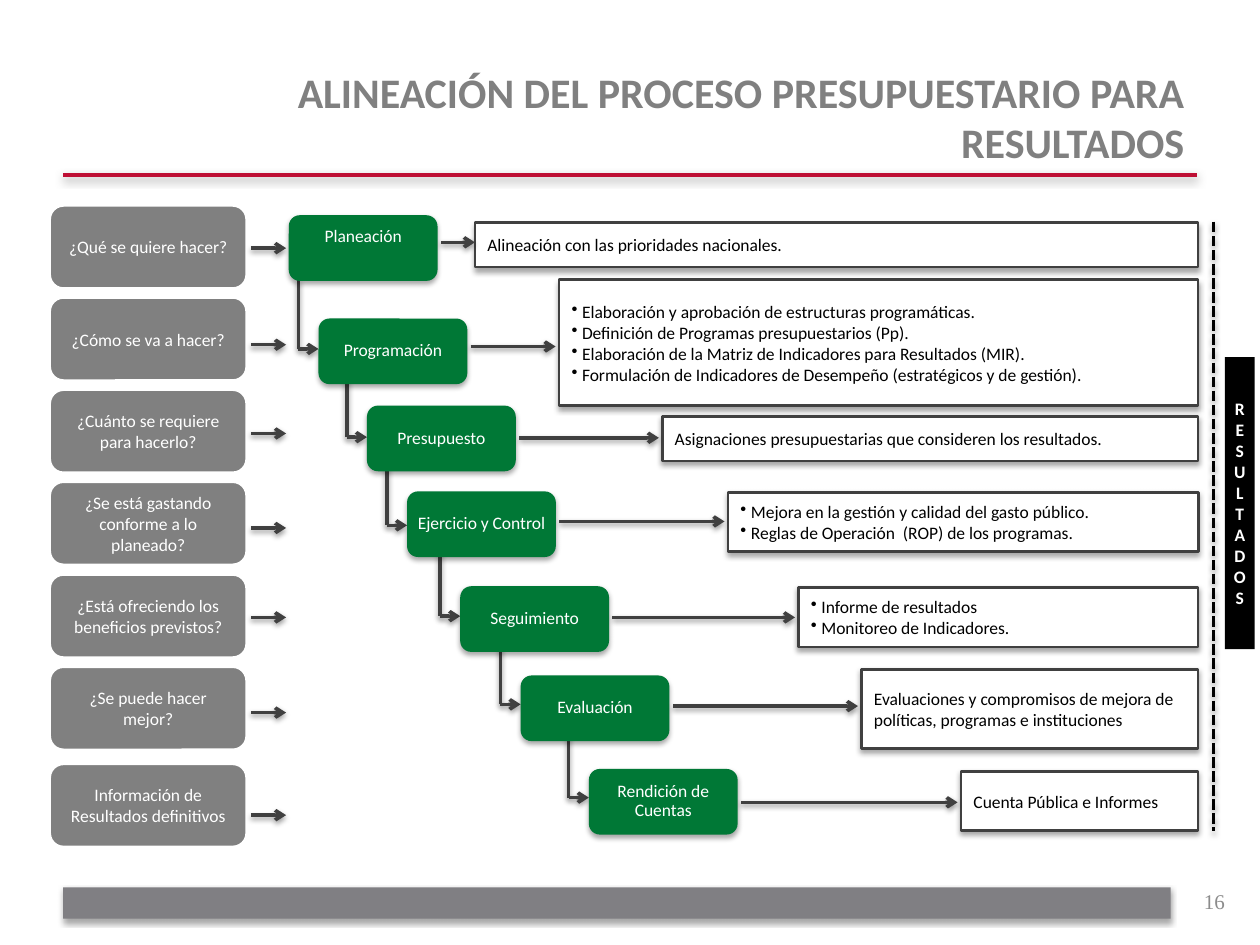
import pptx
import pptx.util
import pptx.dml.color
import pptx.enum.dml
import pptx.enum.shapes
import pptx.enum.text
import pptx.oxml
import pptx.oxml.ns
import lxml.etree

Pt = pptx.util.Pt
SHAPE = pptx.enum.shapes.MSO_SHAPE
ALIGN = pptx.enum.text.PP_ALIGN
ANCHOR = pptx.enum.text.MSO_ANCHOR

THEME = {
    "font": "Calibri", "number_font": "Times New Roman",
    "title_size": 24, "body_size": 10, "number_size": 12,
    "gray": "808080", "green": "007836", "red": "BE0F34", "bar": "807F83",
    "line": "404040", "number": "8C8C8C", "white": "FFFFFF", "black": "000000",
}

TITLE = "ALINEACIÓN DEL PROCESO PRESUPUESTARIO PARA RESULTADOS"
PAGE = "16"
RESULT = "RESULTADOS"

# question, top, arrow y
QUESTIONS = [
    ("¿Qué se quiere hacer?", 117.4, 141.8),
    ("¿Cómo se va a hacer?", 170, 197),
    ("¿Cuánto se requiere para hacerlo?", 222.7, 247.7),
    ("¿Se está gastando conforme a lo planeado?", 275.3, 301.7),
    ("¿Está ofreciendo los beneficios previstos?", 328.3, 352.8),
    ("¿Se puede hacer mejor?", 381, 407.2),
    ("Información de Resultados definitivos", 436.5, 465.8),
]

# stage, left, top, arrow y, top of the elbow that leads in
STAGES = [
    ("Planeación", 165, 123, 138.5, None),
    ("Programación", 182, 182, 198, 159.8),
    ("Presupuesto", 209.7, 231.8, 250.2, 210.2),
    ("Ejercicio y Control", 232.6, 280.8, 298, 260.6),
    ("Seguimiento", 263, 335, 352.8, 312.5),
    ("Evaluación", 297.5, 386, 403.5, 362.9),
    ("Rendición de Cuentas", 336.5, 439.4, 458.5, 416.2),
]

# detail lines, left, top, height
DETAILS = [
    (["Alineación con las prioridades nacionales."], 271.4, 127.3, 25.4),
    (["Elaboración y aprobación de estructuras programáticas.",
      "Definición de Programas presupuestarios (Pp).",
      "Elaboración de la Matriz de Indicadores para Resultados (MIR).",
      "Formulación de Indicadores de Desempeño (estratégicos y de gestión)."],
     319.5, 159.8, 72),
    (["Asignaciones presupuestarias que consideren los resultados."], 378.5, 238, 25.4),
    (["Mejora en la gestión y calidad del gasto público.",
      "Reglas de Operación  (ROP) de los programas."], 416, 281.3, 34),
    (["Informe de resultados", "Monitoreo de Indicadores."], 456.3, 335.7, 34),
    (["Evaluaciones y compromisos de mejora de políticas, programas e instituciones"],
     492.3, 382.6, 45.2),
    (["Cuenta Pública e Informes"], 549.2, 440.8, 34),
]

QUESTION_LEFT, QUESTION_W, QUESTION_H = 28.4, 112.6, 47.5
QUESTION_ARROW = (143.3, 163.5)
STAGE_W, STAGE_H = 85, 37.5
DETAIL_RIGHT = 684.7
ELBOW_W, ELBOW_H = 11.5, 39.6
GAP = 2


def rgb(name):
    return pptx.dml.color.RGBColor.from_string(THEME[name])


def write(shape, lines, color="black", size="body_size", font="font", bold=False,
          align=ALIGN.LEFT, anchor=ANCHOR.MIDDLE, insets=(7.2, 3.6),
          spacing=None, bullets=False):
    tf = shape.text_frame
    tf.word_wrap = True
    tf.vertical_anchor = anchor
    tf.margin_left = tf.margin_right = Pt(insets[0])
    tf.margin_top = tf.margin_bottom = Pt(insets[1])
    for i, line in enumerate(lines):
        p = tf.paragraphs[0] if i == 0 else tf.add_paragraph()
        p.alignment = align
        if spacing:
            p.line_spacing = spacing
        if bullets:
            pPr = p._p.get_or_add_pPr()
            pPr.set("marL", str(Pt(6)))
            pPr.set("indent", str(-Pt(6)))
            pptx.oxml.ns.qn("a:buChar")
            lxml.etree.SubElement(pPr, pptx.oxml.ns.qn("a:buChar"), char="•")
        r = p.add_run()
        r.text = line
        r.font.name = THEME[font]
        r.font.size = Pt(THEME[size])
        r.font.bold = bold
        r.font.color.rgb = rgb(color)


def add_shadow(effects, blur=3.1, dist=1.8, alpha=35):
    effects.append(pptx.oxml.parse_xml(
        f'<a:outerShdw {pptx.oxml.ns.nsdecls("a")} blurRad="{Pt(blur)}" dist="{Pt(dist)}" '
        f'dir="5400000" rotWithShape="0"><a:srgbClr val="000000">'
        f'<a:alpha val="{alpha * 1000}"/></a:srgbClr></a:outerShdw>'))


def box(s, kind, left, top, width, height, fill, line=None, shadow=True):
    sp = s.shapes.add_shape(kind, Pt(left), Pt(top), Pt(width), Pt(height))
    sp.fill.solid()
    sp.fill.fore_color.rgb = rgb(fill)
    if line:
        sp.line.color.rgb = rgb(line)
        sp.line.width = Pt(1.5)
    else:
        sp.line.fill.background()
    sp.shadow.inherit = False
    if shadow:
        add_shadow(sp._element.spPr.find(pptx.oxml.ns.qn("a:effectLst")))
    return sp


def connect(s, x1, y1, x2, y2, color="line", arrow=False, dash=None, blur=3.1):
    cx = s.shapes.add_connector(pptx.enum.shapes.MSO_CONNECTOR.STRAIGHT,
                                Pt(x1), Pt(y1), Pt(x2), Pt(y2))
    cx.line.color.rgb = rgb(color)
    cx.line.width = Pt(2)
    if dash:
        cx.line.dash_style = dash
    if arrow:
        lxml.etree.SubElement(cx.line._get_or_add_ln(), pptx.oxml.ns.qn("a:tailEnd"),
                              type="arrow")
    effects = lxml.etree.SubElement(cx._element.spPr, pptx.oxml.ns.qn("a:effectLst"))
    add_shadow(effects, blur=blur, dist=1.6, alpha=38)


def add_frame(s):
    box(s, SHAPE.RECTANGLE, 36, 507, 633, 18, "bar")
    connect(s, 36, 100, 684, 100, color="red", blur=5)
    title = s.shapes.title
    title.left, title.top, title.width, title.height = Pt(36), Pt(34), Pt(648), Pt(65.5)
    write(title, [TITLE], color="gray", size="title_size", bold=True, align=ALIGN.RIGHT)
    number = s.shapes.add_textbox(Pt(539.5), Pt(500.5), Pt(167.5), Pt(28.8))
    write(number, [PAGE], color="number", size="number_size", font="number_font",
          align=ALIGN.RIGHT)


def add_questions(s):
    for text, top, arrow_y in QUESTIONS:
        sp = box(s, SHAPE.ROUNDED_RECTANGLE, QUESTION_LEFT, top, QUESTION_W, QUESTION_H,
                 "gray", line="white", shadow=False)
        write(sp, [text], color="white", align=ALIGN.CENTER)
        connect(s, QUESTION_ARROW[0], arrow_y, QUESTION_ARROW[1], arrow_y, arrow=True)


def add_stages(s):
    for _, left, _, _, elbow_top in STAGES:
        if elbow_top is not None:
            x, y = left - ELBOW_W, elbow_top + ELBOW_H
            connect(s, x, elbow_top, x, y)
            connect(s, x, y, left, y, arrow=True)
    for (name, left, top, arrow_y, elbow_top), (lines, x, y, height) in zip(STAGES, DETAILS):
        first = elbow_top is None
        sp = box(s, SHAPE.ROUNDED_RECTANGLE, left, top, STAGE_W, STAGE_H, "green")
        write(sp, [name], color="white", align=ALIGN.CENTER, insets=(0, 3.6),
              anchor=ANCHOR.TOP if first else ANCHOR.MIDDLE, spacing=None if first else 0.9)
        detail = box(s, SHAPE.RECTANGLE, x, y, DETAIL_RIGHT - x, height, "white", line="line")
        write(detail, lines, bullets=len(lines) > 1)
        connect(s, left + STAGE_W + GAP, arrow_y, x - (0 if first else GAP), arrow_y, arrow=True)


def add_result(s):
    sp = box(s, SHAPE.RECTANGLE, 700, 204, 17, 167, "black", shadow=False)
    write(sp, list(RESULT), color="white", bold=True, align=ALIGN.CENTER, insets=(0, 3.6))
    connect(s, 693.4, 126.7, 693.4, 475, color="black",
            dash=pptx.enum.dml.MSO_LINE.SQUARE_DOT)


def main():
    prs = pptx.Presentation()
    prs.slide_width, prs.slide_height = Pt(720), Pt(540)
    s = prs.slides.add_slide(prs.slide_layouts[5])
    add_frame(s)
    add_questions(s)
    add_stages(s)
    add_result(s)
    prs.save("out.pptx")


if __name__ == "__main__":
    main()
